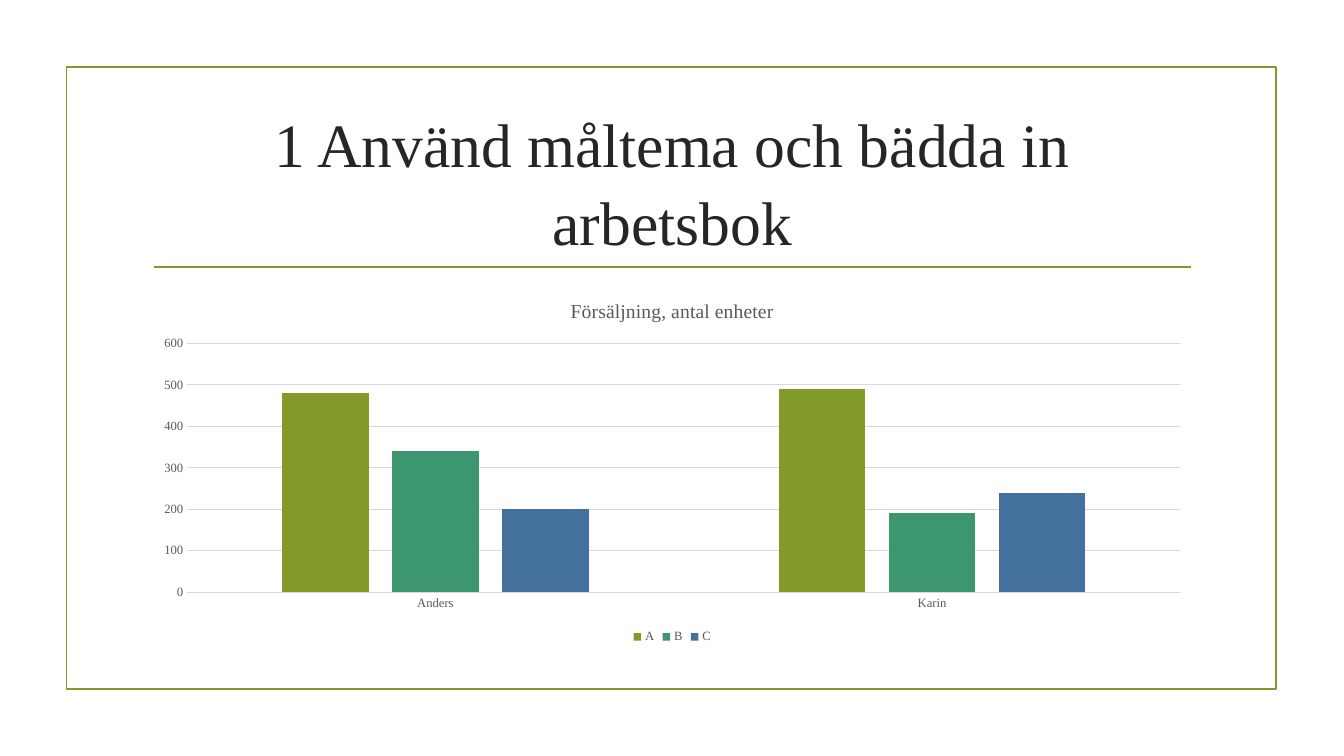
from lxml import etree
from pptx import Presentation
from pptx.chart.data import CategoryChartData
from pptx.dml.color import RGBColor
from pptx.enum.chart import XL_CHART_TYPE, XL_LEGEND_POSITION, XL_TICK_MARK
from pptx.enum.shapes import MSO_CONNECTOR, MSO_SHAPE
from pptx.enum.text import MSO_ANCHOR, MSO_AUTO_SIZE, PP_ALIGN
from pptx.oxml.ns import qn
from pptx.util import Pt

COLUMNS = XL_CHART_TYPE.COLUMN_CLUSTERED
BOTTOM = XL_LEGEND_POSITION.BOTTOM
NO_TICK = XL_TICK_MARK.NONE
STRAIGHT = MSO_CONNECTOR.STRAIGHT
RECTANGLE = MSO_SHAPE.RECTANGLE
MIDDLE = MSO_ANCHOR.MIDDLE
CENTER = PP_ALIGN.CENTER
NO_AUTOFIT = MSO_AUTO_SIZE.NONE

TITLE = "1 Använd måltema och bädda in arbetsbok"
CHART_TITLE = "Försäljning, antal enheter"
PEOPLE = ["Anders", "Karin"]
SALES = [
    ("A", [480, 490], "olive"),
    ("B", [340, 190], "green"),
    ("C", [200, 240], "blue"),
]
COLORS = {
    "olive": "83992A",
    "green": "3C9770",
    "blue": "44709D",
    "title": "262626",
    "label": "595959",
    "grid": "D9D9D9",
}
FONT = "Times New Roman"
LEFT, WIDTH = 102.24, 756


def rgb(name):
    return RGBColor.from_string(COLORS[name])


def style_font(font, size, color):
    font.name = FONT
    font.size = Pt(size)
    font.bold = False
    font.color.rgb = rgb(color)


def style_line(line, color, width):
    line.color.rgb = rgb(color)
    line.width = Pt(width)


prs = Presentation()
prs.slide_width, prs.slide_height = Pt(960), Pt(540)
s = prs.slides.add_slide(prs.slide_layouts[5])

frame = s.shapes.add_shape(RECTANGLE, Pt(47.6), Pt(48), Pt(864), Pt(444))
frame.shadow.inherit = False
frame.fill.background()
style_line(frame.line, "olive", 1.25)

rule = s.shapes.add_connector(STRAIGHT, Pt(110), Pt(190.8), Pt(850.4), Pt(190.8))
style_line(rule.line, "olive", 1.25)
etree.SubElement(rule._element.spPr, qn("a:effectLst"))

title = s.shapes.title
title.left, title.top = Pt(LEFT), Pt(77)
title.width, title.height = Pt(WIDTH), Pt(103)
tf = title.text_frame
tf.text = TITLE
tf.word_wrap = True
tf.auto_size = NO_AUTOFIT
tf.vertical_anchor = MIDDLE
p = tf.paragraphs[0]
p.alignment = CENTER
p.line_spacing = 1.05
style_font(p.runs[0].font, 44, "title")

data = CategoryChartData()
data.categories = PEOPLE
for name, values, _ in SALES:
    data.add_series(name, values)
chart = s.shapes.add_chart(
    COLUMNS, Pt(LEFT), Pt(201.6), Pt(WIDTH), Pt(261.4), data
).chart
style_font(chart.font, 9, "label")

chart.has_title = True
chart.chart_title.include_in_layout = False
tf = chart.chart_title.text_frame
tf.text = CHART_TITLE
style_font(tf.paragraphs[0].runs[0].font, 14, "label")

chart.has_legend = True
chart.legend.position = BOTTOM
chart.legend.include_in_layout = False
style_font(chart.legend.font, 9, "label")

for axis in (chart.category_axis, chart.value_axis):
    axis.major_tick_mark = axis.minor_tick_mark = NO_TICK
    style_font(axis.tick_labels.font, 9, "label")
style_line(chart.category_axis.format.line, "grid", 0.75)
value_axis = chart.value_axis
value_axis.minimum_scale, value_axis.maximum_scale = 0, 600
value_axis.major_unit = 100
value_axis.format.line.fill.background()
style_line(value_axis.major_gridlines.format.line, "grid", 0.75)

plot = chart.plots[0]
plot.vary_by_categories = False
plot.gap_width, plot.overlap = 219, -27
for series, (_, _, color) in zip(plot.series, SALES):
    series.format.fill.solid()
    series.format.fill.fore_color.rgb = rgb(color)

prs.save("out.pptx")
